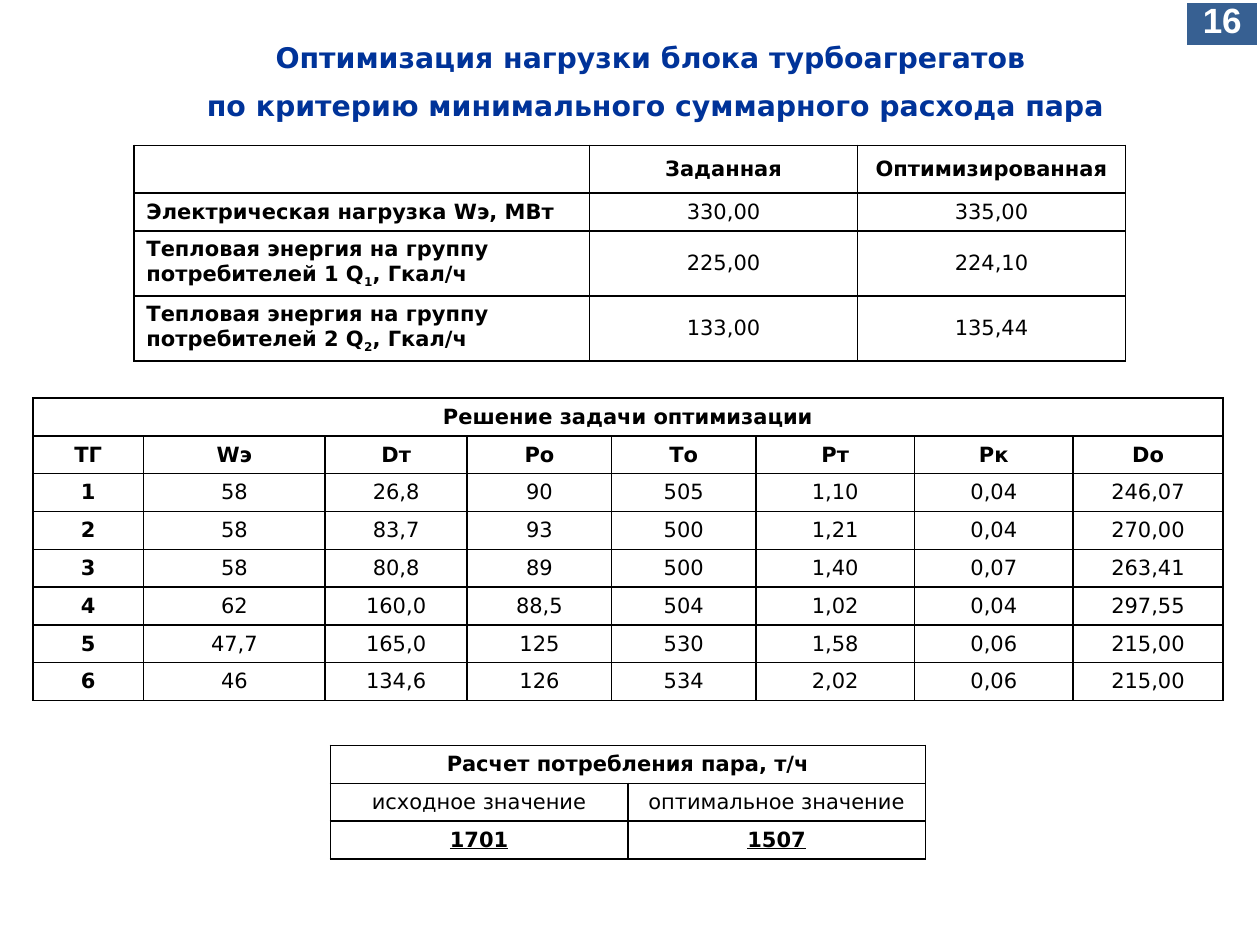
from lxml import etree
from pptx import Presentation
from pptx.dml.color import RGBColor
from pptx.enum.shapes import MSO_SHAPE
from pptx.enum.text import MSO_ANCHOR, PP_ALIGN
from pptx.oxml.ns import qn
from pptx.util import Pt

CENTER, LEFT = PP_ALIGN.CENTER, PP_ALIGN.LEFT
MIDDLE = MSO_ANCHOR.MIDDLE
RECTANGLE = MSO_SHAPE.RECTANGLE
BLACK, WHITE, NAVY, STEEL = "000000", "FFFFFF", "003399", "376092"
ROW_HEIGHT, TALL_ROW = 21.6, 37.1

CONDITIONS = [
    ["", "Заданная", "Оптимизированная"],
    ["Электрическая нагрузка Wэ, МВт", "330,00", "335,00"],
    ["Тепловая энергия на группу потребителей 1 Q_1_, Гкал/ч", "225,00", "224,10"],
    ["Тепловая энергия на группу потребителей 2 Q_2_, Гкал/ч", "133,00", "135,44"],
]
SOLUTION = [
    ["Решение задачи оптимизации"],
    ["ТГ", "Wэ", "Dт", "Pо", "Tо", "Pт", "Pк", "Dо"],
    ["1", "58", "26,8", "90", "505", "1,10", "0,04", "246,07"],
    ["2", "58", "83,7", "93", "500", "1,21", "0,04", "270,00"],
    ["3", "58", "80,8", "89", "500", "1,40", "0,07", "263,41"],
    ["4", "62", "160,0", "88,5", "504", "1,02", "0,04", "297,55"],
    ["5", "47,7", "165,0", "125", "530", "1,58", "0,06", "215,00"],
    ["6", "46", "134,6", "126", "534", "2,02", "0,06", "215,00"],
]
CONSUMPTION = [
    ["Расчет потребления пара, т/ч"],
    ["исходное значение", "оптимальное значение"],
    ["1701", "1507"],
]


def color(hex_string):
    """Return the RGB colour of a hex string."""
    return RGBColor.from_string(hex_string)


def write_text(frame, text, size=12, font="DejaVu Sans", fill=BLACK, bold=False,
               underline=False, align=CENTER, spacing=None):
    """Write one formatted paragraph; parts between underscores are subscripts."""
    paragraph = frame.paragraphs[0]
    paragraph.alignment = align
    if spacing:
        paragraph.line_spacing = spacing
    for part_index, part in enumerate(text.split("_")):
        for line_index, line in enumerate(part.split("\n")):
            if line_index:
                paragraph.add_line_break()
            run = paragraph.add_run()
            run.text = line
            run.font.size, run.font.name = Pt(size), font
            run.font.bold, run.font.underline = bold, underline
            run.font.color.rgb = color(fill)
            if part_index % 2:
                run.font._element.set("baseline", "-25000")


def add_borders(cell):
    """Draw a one-point black line on each side of a cell."""
    properties = cell._tc.get_or_add_tcPr()
    for side in ("a:lnL", "a:lnR", "a:lnT", "a:lnB"):
        line = etree.SubElement(properties, qn(side), w=str(Pt(1)))
        fill = etree.SubElement(line, qn("a:solidFill"))
        etree.SubElement(fill, qn("a:srgbClr"), val=BLACK)


def add_grid(slide, left, top, widths, heights, rows, cell_format):
    """Add a bordered table; a row with a single entry spans all columns."""
    shape = slide.shapes.add_table(len(heights), len(widths), Pt(left), Pt(top),
                                   Pt(sum(widths)), Pt(sum(heights)))
    table = shape.table
    table.first_row = table.horz_banding = False
    for column, width in zip(table.columns, widths):
        column.width = Pt(width)
    for row, height in zip(table.rows, heights):
        row.height = Pt(height)
    for cell in table.iter_cells():
        add_borders(cell)
        cell.fill.background()
        cell.vertical_anchor = MIDDLE
    for row_index, entries in enumerate(rows):
        if len(entries) == 1:
            table.cell(row_index, 0).merge(table.cell(row_index, len(widths) - 1))
        for column_index, text in enumerate(entries):
            write_text(table.cell(row_index, column_index).text_frame, text,
                       **cell_format(row_index, column_index))


def add_conditions(slide, left, top):
    """Add the table of given and optimised loads."""
    add_grid(slide, left, top, [260.5, 153, 153.2],
             [ROW_HEIGHT] * 2 + [TALL_ROW] * 2, CONDITIONS,
             lambda row, column: {"bold": row == 0 or column == 0,
                                  "align": CENTER if column else LEFT})


def add_solution(slide, left, top):
    """Add the table with the solution for each turbine."""
    add_grid(slide, left, top, [63.3, 103.7, 81.2, 82.6, 82.4, 90.7, 90.6, 85.7],
             [ROW_HEIGHT] * len(SOLUTION), SOLUTION,
             lambda row, column: {"bold": row < 2 or column == 0})


def add_consumption(slide, left, top):
    """Add the table of steam consumption."""
    add_grid(slide, left, top, [170, 170], [ROW_HEIGHT] * len(CONSUMPTION), CONSUMPTION,
             lambda row, column: {"bold": row != 1, "underline": row == 2})


def add_title(slide, left, top, width, height):
    """Add the two-line heading."""
    frame = slide.shapes.add_textbox(Pt(left), Pt(top), Pt(width), Pt(height)).text_frame
    frame.word_wrap = True
    frame.vertical_anchor = MIDDLE
    write_text(frame, "Оптимизация нагрузки блока турбоагрегатов \n"
               "по критерию минимального суммарного расхода пара",
               size=16.2, fill=NAVY, bold=True, spacing=Pt(27))


def add_page_number(slide, left, top, width, height):
    """Add the page number badge."""
    shape = slide.shapes.add_shape(RECTANGLE, Pt(left), Pt(top), Pt(width), Pt(height))
    shape.shadow.inherit = False
    shape.fill.solid()
    shape.fill.fore_color.rgb = color(STEEL)
    shape.line.color.rgb = color(WHITE)
    shape.line.width = Pt(1.5)
    frame = shape.text_frame
    frame.vertical_anchor = MIDDLE
    write_text(frame, "16", size=20, font="Arial", fill=WHITE, bold=True, spacing=0.8)


def main():
    """Build the slide and save it."""
    presentation = Presentation()
    presentation.slide_width, presentation.slide_height = Pt(720), Pt(540)
    slide = presentation.slides.add_slide(presentation.slide_layouts[6])
    add_conditions(slide, 76.5, 83)
    add_solution(slide, 18.8, 227.5)
    add_title(slide, 50.4, 13, 648, 59)
    add_consumption(slide, 188.8, 426)
    add_page_number(slide, 677.5, 0.7, 41.8, 25.9)
    presentation.save("out.pptx")


if __name__ == "__main__":
    main()
